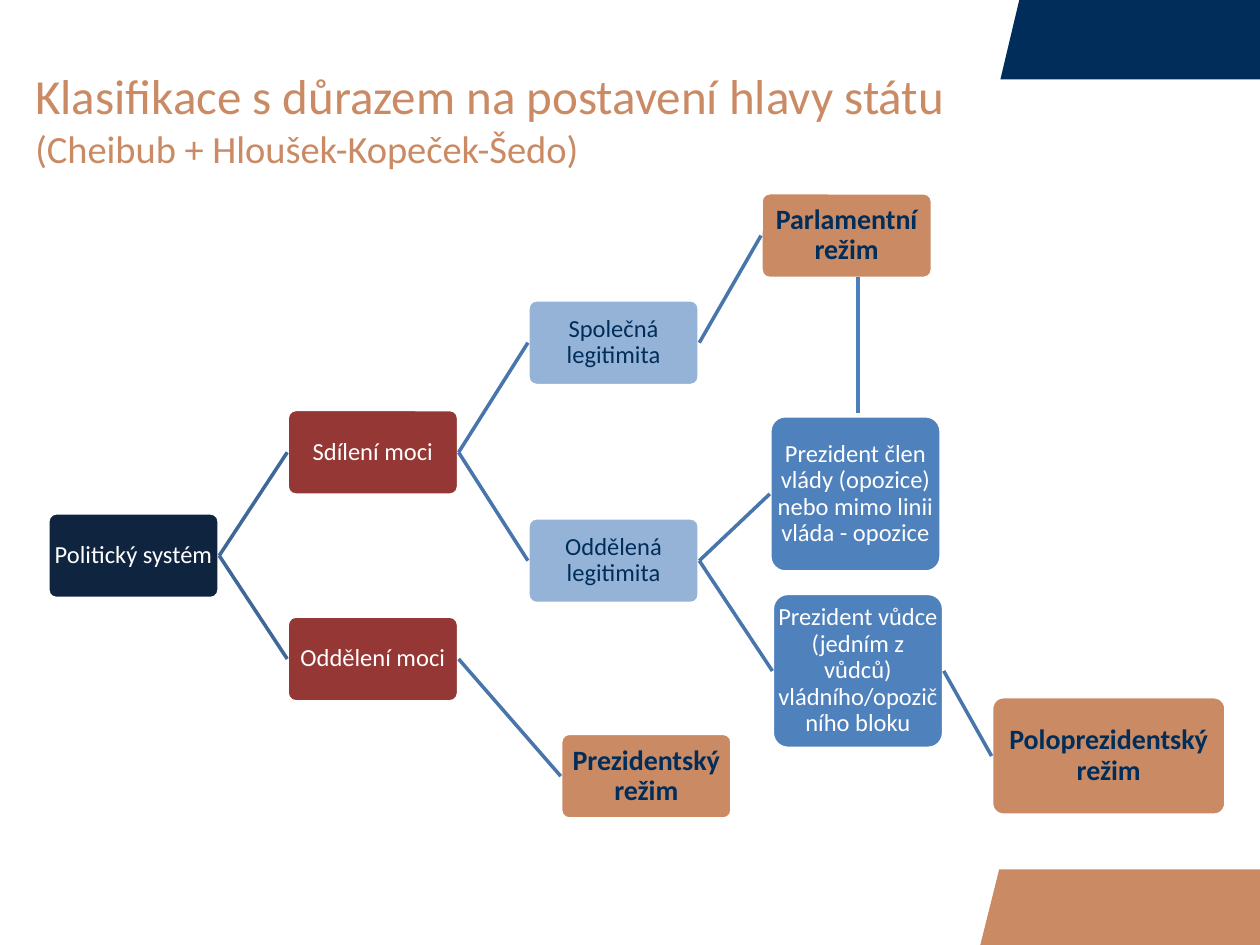
from lxml.etree import SubElement
from pptx import Presentation
from pptx.dml.color import RGBColor
from pptx.enum.shapes import MSO_CONNECTOR, MSO_SHAPE
from pptx.enum.text import MSO_ANCHOR, MSO_AUTO_SIZE, PP_ALIGN
from pptx.oxml.ns import qn
from pptx.util import Inches, Pt

COLORS = {
    "navy": "002D5A", "copper": "CA8A64", "root": "0F243E", "power": "953735",
    "legitimacy": "95B3D7", "president": "4F81BD", "white": "FFFFFF",
    "first_link": "3F6797", "link": "4875AC", "side_link": "4B7EBC",
}
COLUMNS, ROWS = 100, 75
BOX = (13.6, 6.8)
TOP, LEFT, BOTTOM, RIGHT = range(4)

# level: fill, text colour, size, bold
LEVELS = {
    "root": ("root", "white", 14, False),
    "power": ("power", "white", 14, False),
    "legitimacy": ("legitimacy", "navy", 14, False),
    "president": ("president", "white", 14, False),
    "regime": ("copper", "navy", 16, True),
}

# key: text, level, parent, column, row, size
TREE = {
    "system": ("Politický systém", "root", None, 3.8, 40.7, BOX),
    "shared": ("Sdílení moci", "power", "system", 22.8, 32.5, BOX),
    "common": ("Společná legitimita", "legitimacy", "shared", 41.9, 23.8, BOX),
    "parliamentary": ("Parlamentní režim", "regime", "common", 60.4, 15.3, BOX),
    "separate": ("Oddělená legitimita", "legitimacy", "shared", 41.9, 41.1, BOX),
    "member": ("Prezident člen vlády (opozice) nebo mimo linii vláda - opozice",
               "president", "separate", 61.1, 33, (13.6, 12.4)),
    "leader": ("Prezident vůdce (jedním z vůdců) vládního/opozičního bloku",
               "president", "separate", 61.3, 47.1, (13.6, 12.3)),
    "semi": ("Poloprezidentský režim", "regime", "leader", 78.7, 55.3, (18.6, 9.4)),
    "divided": ("Oddělení moci", "power", "system", 22.8, 48.9, BOX),
    "presidential": ("Prezidentský režim", "regime", "divided", 44.5, 58.2, BOX),
}


class Diagram:
    """Places elements on a grid of COLUMNS by ROWS cells."""

    def __init__(self, deck):
        self.cell_width = deck.slide_width / COLUMNS
        self.cell_height = deck.slide_height / ROWS
        self.slide = deck.slides.add_slide(deck.slide_layouts[5])
        self.shapes = self.slide.shapes

    def x(self, columns):
        return round(columns * self.cell_width)

    def y(self, rows):
        return round(rows * self.cell_height)

    def color(self, name):
        return RGBColor.from_string(COLORS[name])

    def style_font(self, font, color, size, bold=False):
        font.name, font.size, font.bold = "Calibri", Pt(size), bold
        font.color.rgb = self.color(color)

    def fill(self, shape, color):
        shape.shadow.inherit = False
        shape.fill.solid()
        shape.fill.fore_color.rgb = self.color(color)

    def corner(self, slant_left, top, bottom, color):
        """Band at the right edge whose left side leans to the right."""
        builder = self.shapes.build_freeform(self.x(slant_left), self.y(bottom))
        builder.add_line_segments([
            (self.x(slant_left + 1.5), self.y(top)),
            (self.x(COLUMNS), self.y(top)),
            (self.x(COLUMNS), self.y(bottom)),
        ])
        band = builder.convert_to_shape()
        self.fill(band, color)
        band.line.fill.background()

    def title(self, heading, source):
        title = self.shapes.title
        title.left, title.top = self.x(0), self.y(0.8)
        title.width, title.height = self.x(COLUMNS), self.y(17.2)
        frame = title.text_frame
        frame.text = f"{heading}\v{source}"
        frame.auto_size = MSO_AUTO_SIZE.NONE
        frame.vertical_anchor = MSO_ANCHOR.MIDDLE
        frame.margin_left = frame.margin_right = Inches(0.28)
        paragraph = frame.paragraphs[0]
        paragraph.alignment = PP_ALIGN.LEFT
        for run, size in zip(paragraph.runs, (28, 22)):
            self.style_font(run.font, "copper", size)

    def box(self, text, level, column, row, size):
        fill, text_color, font_size, bold = LEVELS[level]
        box = self.shapes.add_shape(
            MSO_SHAPE.ROUNDED_RECTANGLE, self.x(column), self.y(row),
            self.x(size[0]), self.y(size[1]))
        box.adjustments[0] = 0.1
        self.fill(box, fill)
        box.line.color.rgb = self.color("white")
        box.line.width = Pt(2)
        frame = box.text_frame
        frame.text = text
        frame.word_wrap = True
        frame.vertical_anchor = MSO_ANCHOR.MIDDLE
        frame.margin_left = frame.margin_right = Inches(0.01)
        frame.margin_top = frame.margin_bottom = Inches(0.01)
        paragraph = frame.paragraphs[0]
        paragraph.alignment = PP_ALIGN.CENTER
        paragraph.line_spacing = 0.9
        self.style_font(paragraph.runs[0].font, text_color, font_size, bold)
        return box

    def line(self, color, start=(0, 0), end=(0, 0)):
        line = self.shapes.add_connector(
            MSO_CONNECTOR.STRAIGHT, self.x(start[0]), self.y(start[1]),
            self.x(end[0]), self.y(end[1]))
        line.line.color.rgb = self.color(color)
        line.line.width = Pt(2)
        SubElement(line._element.spPr, qn("a:effectLst"))
        return line

    def branch(self, parent, child, color):
        link = self.line(color)
        link.begin_connect(parent, RIGHT)
        link.end_connect(child, LEFT)


def main():
    deck = Presentation()
    deck.slide_width, deck.slide_height = Inches(10), Inches(7.5)
    diagram = Diagram(deck)
    diagram.corner(79.4, 0, 6.3, "navy")
    diagram.corner(77.8, 69, ROWS, "copper")
    diagram.title("Klasifikace s důrazem na postavení hlavy státu",
                  "(Cheibub + Hloušek-Kopeček-Šedo)")

    boxes = {}
    for key, (text, level, parent, column, row, size) in TREE.items():
        boxes[key] = diagram.box(text, level, column, row, size)
        if parent:
            color = "first_link" if parent == "system" else "link"
            diagram.branch(boxes[parent], boxes[key], color)
    diagram.line("side_link", (68.1, 32.8), (68.1, 22))

    deck.save("out.pptx")


if __name__ == "__main__":
    main()
